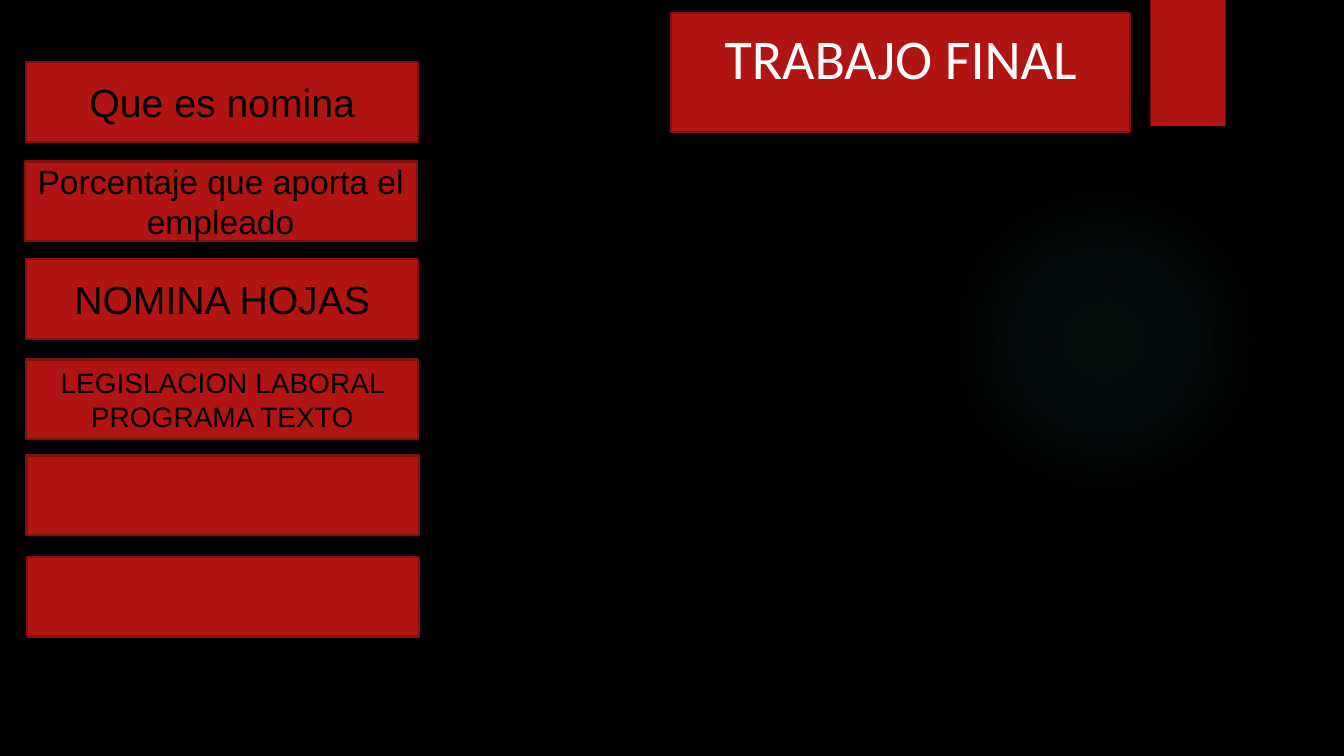
from lxml import etree
from pptx import Presentation
from pptx.dml.color import RGBColor
from pptx.enum.shapes import MSO_SHAPE
from pptx.enum.text import MSO_ANCHOR, PP_ALIGN
from pptx.oxml import parse_xml
from pptx.util import Cm, Pt

RECTANGLE, OVAL = MSO_SHAPE.RECTANGLE, MSO_SHAPE.OVAL
MIDDLE, CENTER = MSO_ANCHOR.MIDDLE, PP_ALIGN.CENTER
DRAWING_NS = "http://schemas.openxmlformats.org/drawingml/2006/main"

THEME = {
    "background": RGBColor.from_string("000000"),
    "red": RGBColor.from_string("B01513"),
    "border": RGBColor.from_string("82100E"),
    "light": RGBColor.from_string("FFFFFF"),
    "dark": RGBColor.from_string("000000"),
    "glow": "50B9C1",
    "title_size": 40,
    "large": 28,
    "medium": 24,
    "small": 20,
    "border_width": Pt(1.5),
}


def add_block(slide, left, top, width, height, bordered=True):
    shape = slide.shapes.add_shape(RECTANGLE, Cm(left), Cm(top), Cm(width), Cm(height))
    shape.shadow.inherit = False
    shape.fill.solid()
    shape.fill.fore_color.rgb = THEME["red"]
    if bordered:
        shape.line.color.rgb = THEME["border"]
        shape.line.width = THEME["border_width"]
    else:
        shape.line.fill.background()
    return shape


def write_text(shape, text, font_format, color):
    frame = shape.text_frame
    frame.word_wrap = True
    frame.vertical_anchor = MIDDLE
    paragraph = frame.paragraphs[0]
    paragraph.alignment = CENTER
    run = paragraph.add_run()
    run.text = text
    for name, value in font_format.items():
        setattr(run.font, name, value)
    run.font.color.rgb = color


presentation = Presentation()
presentation.slide_width, presentation.slide_height = Cm(33.87), Cm(19.05)
slide = presentation.slides.add_slide(presentation.slide_layouts[6])
slide.background.fill.solid()
slide.background.fill.fore_color.rgb = THEME["background"]

# Soft radial glow: (position, opacity) in percent
glow = slide.shapes.add_shape(OVAL, Cm(23.91), Cm(4.66), Cm(7.83), Cm(7.83))
glow.shadow.inherit = False
glow.line.fill.background()
glow.fill.background()
stops = "".join(
    f'<a:gs pos="{position * 1000}"><a:srgbClr val="{THEME["glow"]}">'
    f'<a:alpha val="{opacity * 1000}"/></a:srgbClr></a:gs>'
    for position, opacity in [(0, 7), (36, 6), (69, 0)]
)
gradient = parse_xml(
    f'<a:gradFill xmlns:a="{DRAWING_NS}"><a:gsLst>{stops}</a:gsLst><a:path path="circle">'
    '<a:fillToRect l="50000" t="50000" r="50000" b="50000"/></a:path></a:gradFill>'
)
properties = glow.element.spPr
properties.replace(properties.find(etree.QName(DRAWING_NS, "noFill").text), gradient)

# Ribbon at the top edge
add_block(slide, 28.99, 0, 1.9, 3.18, bordered=False)

# Title, raised above the middle by a deeper bottom margin
title = add_block(slide, 16.92, 0.33, 11.56, 3)
title.text_frame.margin_bottom = Cm(0.9)
write_text(title, "TRABAJO FINAL",
           {"name": "Calibri", "size": Pt(THEME["title_size"])}, THEME["light"])

# Menu buttons: left, top, text, size
buttons = [
    (0.66, 1.57, "Que es nomina", "large"),
    (0.62, 4.07, "Porcentaje que aporta el empleado", "medium"),
    (0.66, 6.53, "NOMINA HOJAS", "large"),
    (0.66, 9.06, "LEGISLACION LABORAL PROGRAMA TEXTO", "small"),
    (0.69, 14.03, "", "large"),
    (0.67, 11.48, "", "large"),
]
for left, top, text, size in buttons:
    button = add_block(slide, left, top, 9.88, 2.01)
    if text:
        write_text(button, text, {"name": "Arial", "size": Pt(THEME[size])}, THEME["dark"])

presentation.save("out.pptx")
